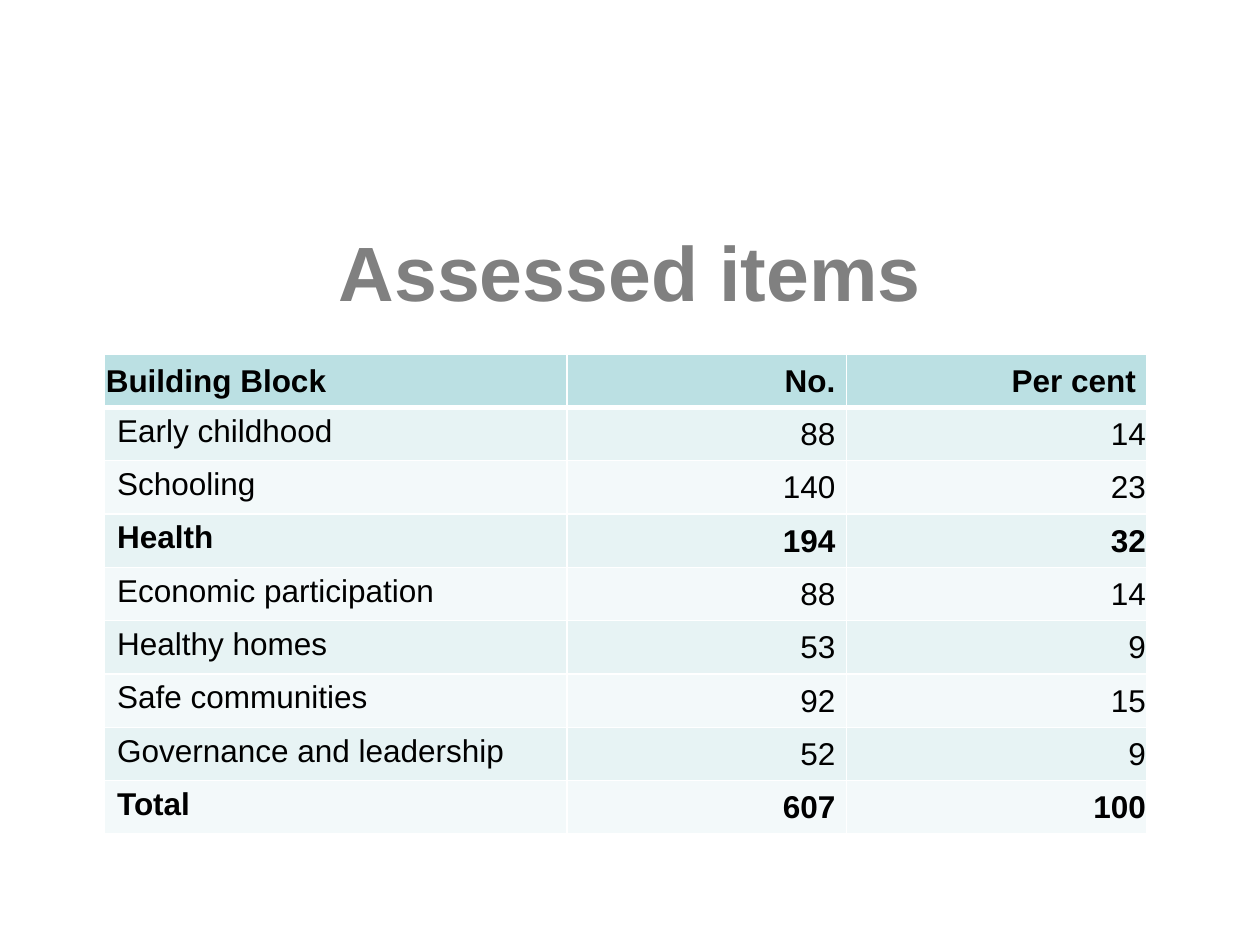
import pptx
import pptx.dml.color
import pptx.enum.text
import pptx.oxml
import pptx.oxml.ns
import pptx.util

ALIGN = pptx.enum.text.PP_ALIGN
ANCHOR = pptx.enum.text.MSO_ANCHOR

BLOCKS = [
    ("Building Block", "No.", "Per cent"),
    ("Early childhood", "88", "14"),
    ("Schooling", "140", "23"),
    ("Health", "194", "32"),
    ("Economic participation", "88", "14"),
    ("Healthy homes", "53", "9"),
    ("Safe communities", "92", "15"),
    ("Governance and leadership", "52", "9"),
    ("Total", "607", "100"),
]
BOLD_BLOCKS = {"Building Block", "Health", "Total"}


def color(code):
    return pptx.dml.color.RGBColor.from_string(code)


class Page:
    """The slide and its style; lengths are cells of a 20 by 15 grid."""

    FONT = "Arial"
    TITLE, TEXT, RULE = "808080", "000000", "FFFFFF"
    HEADER, BANDS = "BBE0E3", ("F3F9FA", "E7F3F4")

    def __init__(self, deck):
        self.column = deck.slide_width / 20
        self.row = deck.slide_height / 15
        self.slide = deck.slides.add_slide(deck.slide_layouts[5])

    def place(self, left, top, width, height):
        return (round(left * self.column), round(top * self.row),
                round(width * self.column), round(height * self.row))

    def add_text(self, frame, text, size, code, bold, align):
        para = frame.paragraphs[0]
        para.alignment = align
        span = para.add_run()
        span.text = text
        span.font.name = self.FONT
        span.font.size = pptx.util.Pt(size)
        span.font.bold = bold
        span.font.color.rgb = color(code)

    def title(self, text, *area):
        box = self.slide.shapes.title
        box.left, box.top, box.width, box.height = self.place(*area)
        box.text_frame.vertical_anchor = ANCHOR.MIDDLE
        self.add_text(box.text_frame, text, 44, self.TITLE, True, ALIGN.CENTER)

    def border(self, cell, **widths):
        """Rule the cell's sides, given in the order L, R, T, B, in points."""
        for side, width in widths.items():
            cell._tc.get_or_add_tcPr().append(pptx.oxml.parse_xml(
                f'<a:ln{side} {pptx.oxml.ns.nsdecls("a")} w="{pptx.util.Pt(width)}">'
                f'<a:solidFill><a:srgbClr val="{self.RULE}"/></a:solidFill></a:ln{side}>'))

    def margins(self, cell, left, top, right, bottom):
        cell.margin_left = pptx.util.Inches(left)
        cell.margin_top = pptx.util.Inches(top)
        cell.margin_right = pptx.util.Inches(right)
        cell.margin_bottom = pptx.util.Inches(bottom)

    def cell(self, cell, text, row, column, bold):
        header, label = row == 0, column == 0
        self.border(cell, L=1, R=1, T=3 if row == 1 else 1, B=3 if header else 1)
        cell.fill.solid()
        cell.fill.fore_color.rgb = color(self.HEADER if header else self.BANDS[row % 2])
        if label and not header:
            cell.vertical_anchor = ANCHOR.TOP
            self.margins(cell, 0.1, 0.05, 0.1, 0.05)
        else:
            cell.vertical_anchor = ANCHOR.MIDDLE
            padded = column == 1 or (header and not label)
            self.margins(cell, 0.01, 0.01, 0.09 if padded else 0.01, 0)
        self.add_text(cell.text_frame, text, 18, self.TEXT, bold,
                      ALIGN.LEFT if label else ALIGN.RIGHT)

    def table(self, rows, left, top, widths, height):
        area = self.place(left, top, sum(widths), height)
        table = self.slide.shapes.add_table(len(rows), len(widths), *area).table
        for column, width in zip(table.columns, widths):
            column.width = round(width * self.column)
        for r, texts in enumerate(rows):
            for c, text in enumerate(texts):
                self.cell(table.cell(r, c), text, r, c, texts[0] in BOLD_BLOCKS)


def main():
    deck = pptx.Presentation()
    deck.slide_width = pptx.util.Inches(10)
    deck.slide_height = pptx.util.Inches(7.5)
    page = Page(deck)
    page.title("Assessed items", 1, 3.04, 18, 2.5)
    page.table(BLOCKS, 1.66, 5.62, (7.34, 4.44, 4.77), 7.62)
    deck.save("out.pptx")


if __name__ == "__main__":
    main()
